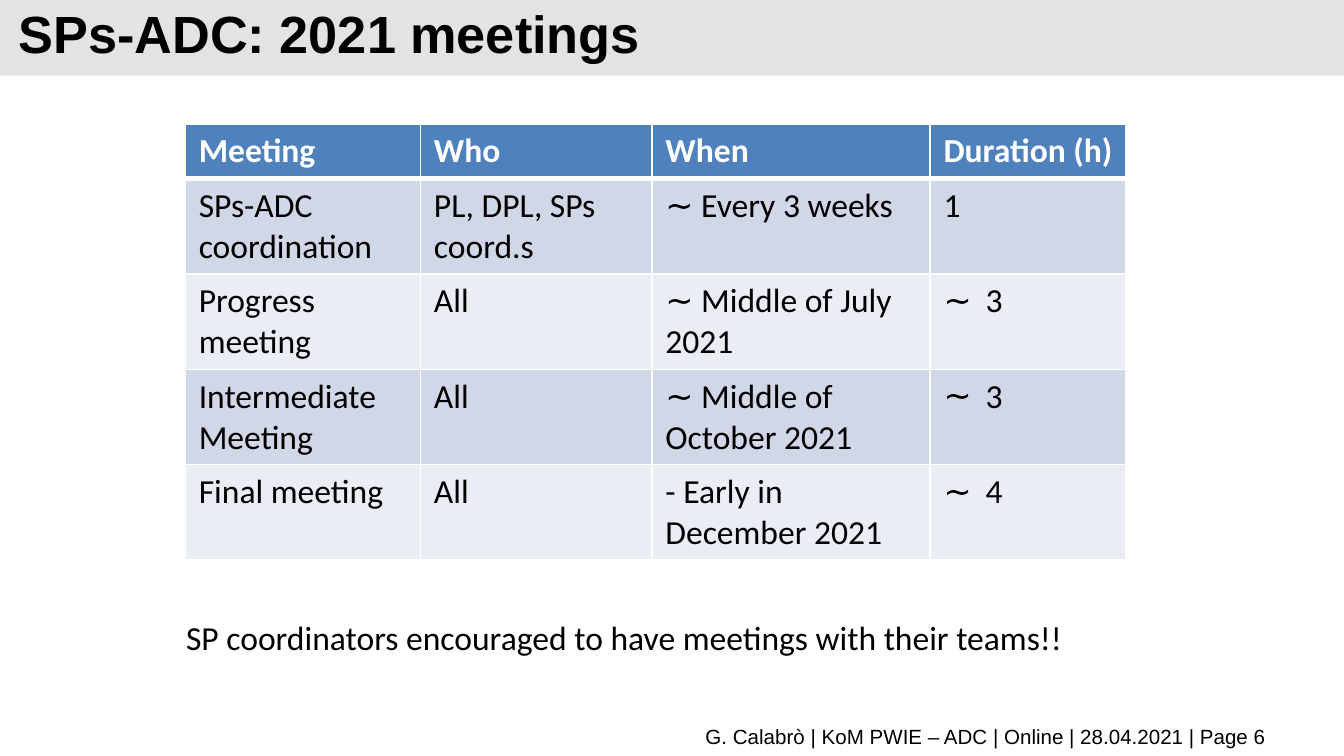
import pptx
import pptx.dml.color
import pptx.enum.shapes
import pptx.enum.text
import pptx.oxml
import pptx.oxml.ns
import pptx.util

Pt = pptx.util.Pt
ALIGN = pptx.enum.text.PP_ALIGN
ANCHOR = pptx.enum.text.MSO_ANCHOR
COLORS = {
    "band": "E3E3E3", "black": "000000", "white": "FFFFFF",
    "header": "4F81BD", "odd": "D0D8E8", "even": "E9EDF4",
}
NS = pptx.oxml.ns.nsdecls("a")


def rgb(name):
    return pptx.dml.color.RGBColor.from_string(COLORS[name])


def set_font(paragraph, face, size, color="black", bold=False):
    font = paragraph.font
    font.name, font.size, font.bold = face, Pt(size), bold
    font.color.rgb = rgb(color)


deck = pptx.Presentation()
deck.slide_width, deck.slide_height = Pt(720), Pt(405)
slide = deck.slides.add_slide(deck.slide_layouts[6])

# Title band
band = slide.shapes.add_shape(
    pptx.enum.shapes.MSO_SHAPE.RECTANGLE, 0, 0, Pt(720), Pt(40.5))
band.shadow.inherit = False
band.fill.solid()
band.fill.fore_color.rgb = rgb("band")
band.line.fill.background()

# Title, footer and closing remark
texts = [
    ("SPs-ADC: 2021 meetings", (3, 4.5, 672, 27.5),
     "Arial", 28, True, ALIGN.LEFT, ANCHOR.MIDDLE, True, Pt(32)),
    ("G. Calabrò | KoM PWIE – ADC | Online | 28.04.2021 | Page 6",
     (36.5, 386.5, 649, 16),
     "Arial", 11, False, ALIGN.RIGHT, ANCHOR.MIDDLE, True, None),
    ("SP coordinators encouraged to have meetings with their teams!!",
     (92.6, 327, 511, 29),
     "Calibri", 18, False, ALIGN.LEFT, ANCHOR.TOP, False, None),
]
for text, place, face, size, bold, align, anchor, wrap, spacing in texts:
    frame = slide.shapes.add_textbox(*map(Pt, place)).text_frame
    frame.word_wrap, frame.vertical_anchor = wrap, anchor
    line = frame.paragraphs[0]
    line.text, line.alignment, line.line_spacing = text, align, spacing
    set_font(line, face, size, bold=bold)

# Meetings table
meetings = [
    ("Meeting", "Who", "When", "Duration (h)"),
    ("SPs-ADC coordination", "PL, DPL, SPs coord.s", "∼ Every 3 weeks", "1"),
    ("Progress meeting", "All", "∼ Middle of July 2021", "3"),
    ("Intermediate Meeting", "All", "∼ Middle of October 2021", "3"),
    ("Final meeting", "All", "- Early in December 2021", "4"),
]
widths = [126, 124, 149, 105]
heights = [29.2] + [51.1] * 4
schedule = slide.shapes.add_table(
    len(heights), len(widths), Pt(99.3), Pt(66.5),
    Pt(sum(widths)), Pt(sum(heights))).table
for column, width in zip(schedule.columns, widths):
    column.width = Pt(width)

for r, (meeting, height) in enumerate(zip(meetings, heights)):
    schedule.rows[r].height = Pt(height)
    for c, text in enumerate(meeting):
        cell = schedule.cell(r, c)
        cell.fill.solid()
        cell.fill.fore_color.rgb = rgb("header" if r == 0 else "odd" if r % 2 else "even")

        # White borders, thicker between header and body
        borders = {"lnL": 1, "lnR": 1, "lnT": 3 if r == 1 else 1, "lnB": 3 if r == 0 else 1}
        for position, (side, weight) in enumerate(borders.items()):
            cell._tc.get_or_add_tcPr().insert(position, pptx.oxml.parse_xml(
                f'<a:{side} {NS} w="{Pt(weight)}"><a:solidFill>'
                f'<a:srgbClr val="{COLORS["white"]}"/></a:solidFill></a:{side}>'))

        entry = cell.text_frame.paragraphs[0]
        entry.text = text
        # Approximate durations carry a tilde bullet
        if c == 3 and r > 1:
            properties = entry._p.get_or_add_pPr()
            properties.set("marL", str(Pt(22.5)))
            properties.set("indent", str(-Pt(22.5)))
            properties.append(pptx.oxml.parse_xml(f'<a:buFont {NS} typeface="Calibri"/>'))
            properties.append(pptx.oxml.parse_xml(f'<a:buChar {NS} char="∼"/>'))
        set_font(entry, "Calibri", 18, "white" if r == 0 else "black", r == 0)

deck.save("out.pptx")
